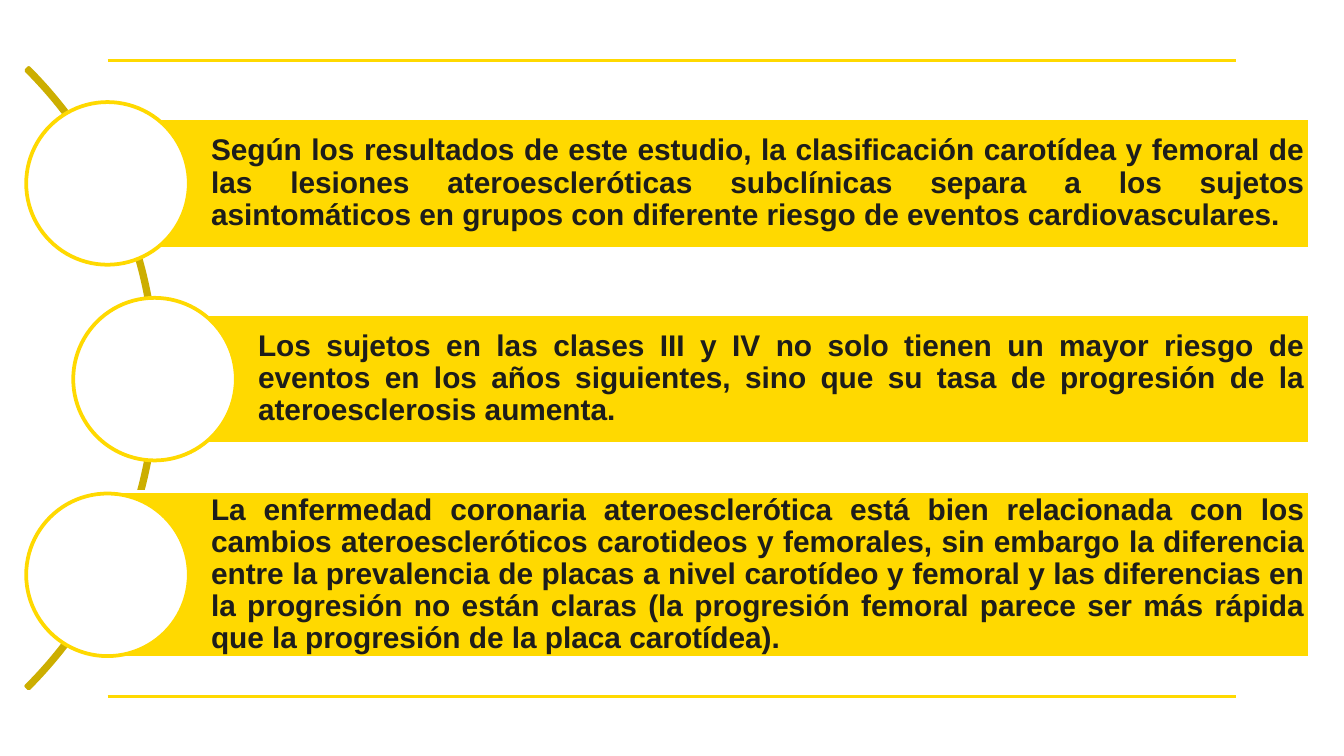
from pptx import Presentation
from pptx import util as u
from pptx.dml.color import RGBColor
from pptx.enum import shapes, text
from pptx.oxml.ns import qn
from lxml import etree

COLS, ROWS = 100, 56.25  # grid of 0.1 inch cells on a 16:9 slide


def rgb(value):
    return RGBColor.from_string(value)


class Deck:
    """Style and current slide; lengths are grid columns and rows."""
    yellow, gold, ink, white = "FFD900", "CCAE00", "1D1D1B", "FFFFFF"
    font = {"name": "Arial", "size": u.Pt(16), "bold": True}
    para = {"alignment": text.PP_ALIGN.JUSTIFY, "line_spacing": 0.9,
            "space_after": u.Pt(5.6)}
    frame = {"word_wrap": True, "vertical_anchor": text.MSO_ANCHOR.MIDDLE,
             "margin_left": u.Inches(0.77), "margin_right": u.Inches(0.04),
             "margin_top": u.Inches(0.04), "margin_bottom": u.Inches(0.04)}

    def __init__(self):
        self.prs = Presentation()
        self.prs.slide_width = u.Inches(10)
        self.prs.slide_height = self.prs.slide_width * 9 // 16
        self.s = self.prs.slides.add_slide(self.prs.slide_layouts[6])

    def x(self, cols):
        return int(self.prs.slide_width * cols / COLS)

    def y(self, rows):
        return int(self.prs.slide_height * rows / ROWS)

    @staticmethod
    def apply(target, values):
        for key, value in values.items():
            setattr(target, key, value)

    def rule(self, row, left=8, right=92):
        sp = self.s.shapes.add_connector(
            shapes.MSO_CONNECTOR.STRAIGHT,
            self.x(left), self.y(row), self.x(right), self.y(row))
        sp.line.color.rgb, sp.line.width = rgb(self.yellow), u.Pt(1.5)
        etree.SubElement(sp._element.spPr, qn("a:effectLst"))

    def shape(self, kind, left, top, width, height, line, fill=None):
        sp = self.s.shapes.add_shape(kind, self.x(left), self.y(top),
                                     self.x(width), self.y(height))
        sp.shadow.inherit = False
        sp.line.color.rgb, sp.line.width = rgb(line), u.Pt(2)
        if fill:
            sp.fill.solid()
            sp.fill.fore_color.rgb = rgb(fill)
        else:
            sp.fill.background()
        return sp

    def arc(self, left, top, size):
        sp = self.shape(shapes.MSO_SHAPE.BLOCK_ARC, left, top, size, size, self.gold)
        for i, value in enumerate((189, 27, 0.004)):
            sp.adjustments[i] = value
        # Rounded ends
        etree.SubElement(sp._element.spPr.find(qn("a:ln")), qn("a:round"))

    def band(self, left, middle, height, words, right=97.5):
        sp = self.shape(shapes.MSO_SHAPE.RECTANGLE, left, middle - height / 2,
                        right - left, height, self.white, self.yellow)
        tf = sp.text_frame
        self.apply(tf, self.frame)
        p = tf.paragraphs[0]
        self.apply(p, self.para)
        r = p.add_run()
        r.text = words
        self.apply(r.font, self.font)
        r.font.color.rgb = rgb(self.ink)

    def circle(self, center, middle, size=12.1):
        self.shape(shapes.MSO_SHAPE.OVAL, center - size / 2, middle - size / 2,
                   size, size, self.yellow, self.white)


# Circle centre column, band height and wording of each conclusion
CONCLUSIONS = [
    (8, 9.7, "Según los resultados de este estudio, la clasificación carotídea y "
     "femoral de las lesiones ateroescleróticas subclínicas separa a los sujetos "
     "asintomáticos en grupos con diferente riesgo de eventos cardiovasculares."),
    (11.5, 9.7, "Los sujetos en las clases III y IV no solo tienen un mayor riesgo "
     "de eventos en los años siguientes, sino que su tasa de progresión de la "
     "ateroesclerosis aumenta."),
    (8, 12.4, "La enfermedad coronaria ateroesclerótica está bien relacionada con "
     "los cambios ateroescleróticos carotideos y femorales, sin embargo la "
     "diferencia entre la prevalencia de placas a nivel carotídeo y femoral y las "
     "diferencias en la progresión no están claras (la progresión femoral parece "
     "ser más rápida que la progresión de la placa carotídea)."),
]


def main():
    deck = Deck()

    # Rules at the foot and head of the slide
    for row in (51.8, 4.5):
        deck.rule(row)

    # Curve behind the list
    deck.arc(-53.6, -4.5, 65.3)

    # Bands, each starting at the centre of its circle
    first, pitch = 13.65, 14.56
    for i, (center, height, words) in enumerate(CONCLUSIONS):
        middle = first + i * pitch
        deck.band(center, middle, height, words)
        deck.circle(center, middle)

    deck.prs.save("out.pptx")


if __name__ == "__main__":
    main()
